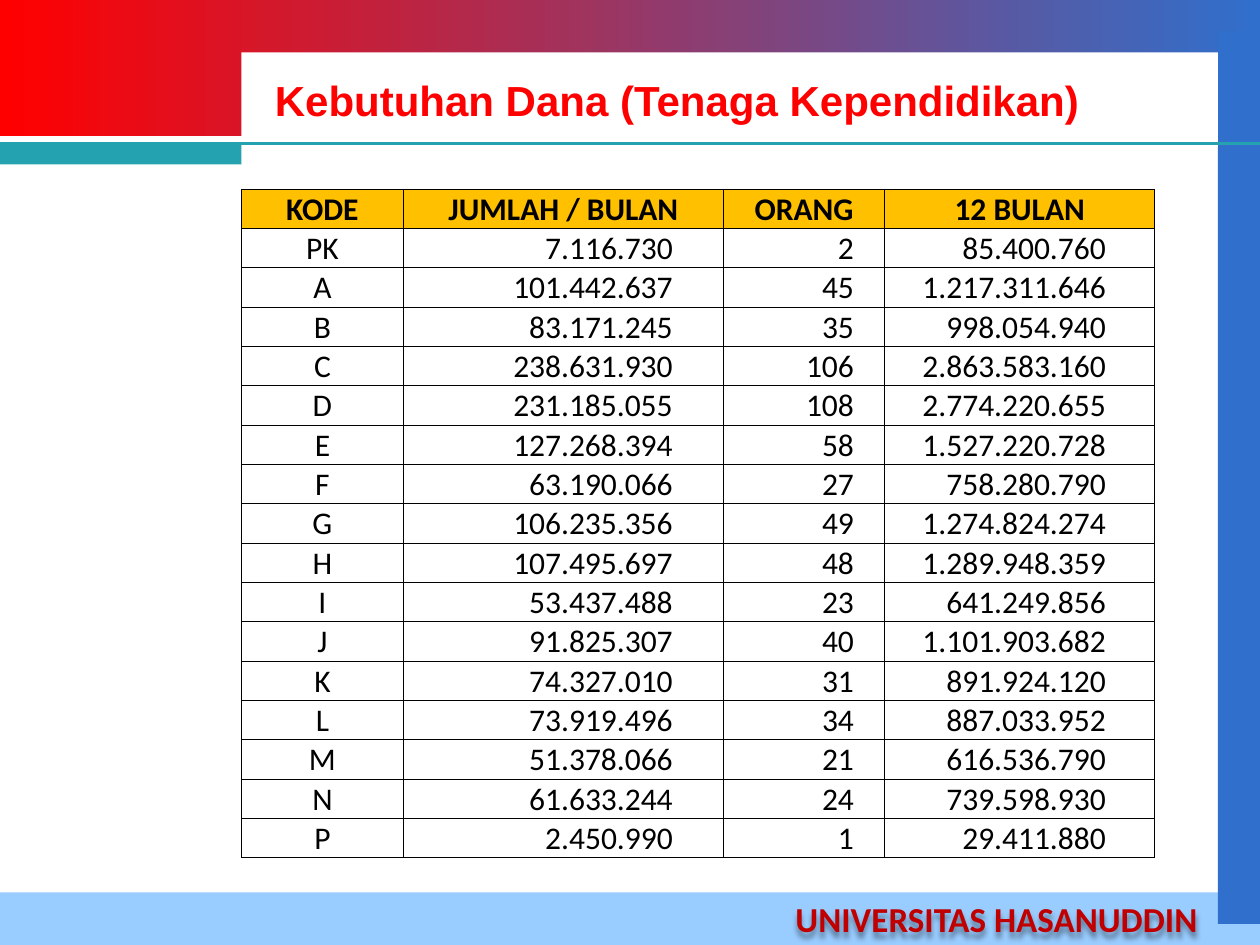
from lxml import etree
from pptx import Presentation
from pptx.dml.color import RGBColor
from pptx.enum import shapes, text
from pptx.oxml import parse_xml
from pptx.oxml.ns import nsdecls, qn
from pptx.util import Pt

RED = RGBColor(0xFF, 0x00, 0x00)
DARK_RED = RGBColor(0xC0, 0x00, 0x00)
BLUE = RGBColor(0x30, 0x6F, 0xCC)
LIGHT_BLUE = RGBColor(0x99, 0xCC, 0xFF)
TEAL = RGBColor(0x25, 0xA2, 0xAF)
GOLD = RGBColor(0xFF, 0xC0, 0x00)
WHITE = RGBColor(0xFF, 0xFF, 0xFF)
BLACK = RGBColor(0x00, 0x00, 0x00)

TITLE = "Kebutuhan Dana (Tenaga Kependidikan)"
FOOTER = "UNIVERSITAS HASANUDDIN"
HEADER = ("KODE", "JUMLAH / BULAN", "ORANG", "12 BULAN")
ROWS = [
    ("PK", "7.116.730", "2", "85.400.760"),
    ("A", "101.442.637", "45", "1.217.311.646"),
    ("B", "83.171.245", "35", "998.054.940"),
    ("C", "238.631.930", "106", "2.863.583.160"),
    ("D", "231.185.055", "108", "2.774.220.655"),
    ("E", "127.268.394", "58", "1.527.220.728"),
    ("F", "63.190.066", "27", "758.280.790"),
    ("G", "106.235.356", "49", "1.274.824.274"),
    ("H", "107.495.697", "48", "1.289.948.359"),
    ("I", "53.437.488", "23", "641.249.856"),
    ("J", "91.825.307", "40", "1.101.903.682"),
    ("K", "74.327.010", "31", "891.924.120"),
    ("L", "73.919.496", "34", "887.033.952"),
    ("M", "51.378.066", "21", "616.536.790"),
    ("N", "61.633.244", "24", "739.598.930"),
    ("P", "2.450.990", "1", "29.411.880"),
]
COLUMN_WIDTHS = (92.5, 183, 92, 154.5)
RIGHT_INSETS = (0.72, 29, 17.5, 28)  # room to the right of the figures
ROW_HEIGHT = 22.5
CELL_INSET = 0.72

# left, top, width, height, colour
TOP_BAND = (0, 0, 720, 78, RED)
BANDS = [
    (0, 510, 720, 30, LIGHT_BLUE),
    (696, 18, 24, 510, BLUE),
    (138, 30, 558, 54, WHITE),
    (0, 82, 138, 12, TEAL),
]
RULE_Y = 82


def add_band(slide, left, top, width, height, colour):
    band = slide.shapes.add_shape(shapes.MSO_SHAPE.RECTANGLE,
                                  Pt(left), Pt(top), Pt(width), Pt(height))
    band.shadow.inherit = False
    band.fill.solid()
    band.fill.fore_color.rgb = colour
    band.line.fill.background()
    return band


def add_rule(slide):
    rule = slide.shapes.add_connector(shapes.MSO_CONNECTOR.STRAIGHT,
                                      0, Pt(RULE_Y), Pt(720), Pt(RULE_Y))
    rule.line.color.rgb = TEAL
    rule.line.width = Pt(2.25)
    etree.SubElement(rule._element.spPr, qn("a:effectLst"))


def add_span(para, words, font, size, colour, bold):
    span = para.add_run()
    span.text = words
    span.font.name = font
    span.font.size = Pt(size)
    span.font.color.rgb = colour
    span.font.bold = bold


def add_label(slide, left, top, width, height, words, font, size, colour, wrap):
    box = slide.shapes.add_textbox(Pt(left), Pt(top), Pt(width), Pt(height))
    box.text_frame.word_wrap = wrap
    box.text_frame.vertical_anchor = text.MSO_ANCHOR.MIDDLE
    add_span(box.text_frame.paragraphs[0], words, font, size, colour, True)
    return box


def add_soft_shadow(box):
    box._element.spPr.append(parse_xml(
        f'<a:effectLst {nsdecls("a")}><a:outerShdw blurRad="38100" dist="38100" '
        'dir="5400000"><a:srgbClr val="000000"><a:alpha val="40000"/>'
        '</a:srgbClr></a:outerShdw></a:effectLst>'))


def add_borders(cell):
    properties = cell._tc.get_or_add_tcPr()
    for side in ("lnL", "lnR", "lnT", "lnB"):
        properties.append(parse_xml(
            f'<a:{side} {nsdecls("a")} w="{Pt(0.5)}"><a:solidFill>'
            f'<a:srgbClr val="{BLACK}"/></a:solidFill></a:{side}>'))


def fill_cell(cell, words, column, is_header):
    centred = is_header or column == 0
    cell.margin_left = cell.margin_top = Pt(CELL_INSET)
    cell.margin_right = Pt(CELL_INSET if centred else RIGHT_INSETS[column])
    cell.margin_bottom = 0
    cell.vertical_anchor = text.MSO_ANCHOR.BOTTOM
    add_borders(cell)
    if is_header:
        cell.fill.solid()
        cell.fill.fore_color.rgb = GOLD
    else:
        cell.fill.background()
    para = cell.text_frame.paragraphs[0]
    para.alignment = text.PP_ALIGN.CENTER if centred else text.PP_ALIGN.RIGHT
    add_span(para, words, "Calibri", 18, BLACK, is_header)


def add_cost_table(slide):
    lines = [HEADER] + ROWS
    table = slide.shapes.add_table(
        len(lines), len(HEADER), Pt(138), Pt(108),
        Pt(sum(COLUMN_WIDTHS)), Pt(ROW_HEIGHT * len(lines))).table
    table.first_row = table.horz_banding = False
    for column, width in zip(table.columns, COLUMN_WIDTHS):
        column.width = Pt(width)
    for r, line in enumerate(lines):
        table.rows[r].height = Pt(ROW_HEIGHT)
        for c, words in enumerate(line):
            fill_cell(table.cell(r, c), words, c, r == 0)


def main():
    deck = Presentation()
    deck.slide_width, deck.slide_height = Pt(720), Pt(540)
    slide = deck.slides.add_slide(deck.slide_layouts[6])

    top_band = add_band(slide, *TOP_BAND)
    top_band.fill.gradient()
    top_band.fill.gradient_angle = 0
    for stop, colour in zip(top_band.fill.gradient_stops, (RED, BLUE)):
        stop.color.rgb = colour
    for band in BANDS:
        add_band(slide, *band)
    add_rule(slide)

    footer = add_label(slide, 447.5, 509, 246, 31.5, FOOTER, "Calibri", 20, DARK_RED, False)
    add_soft_shadow(footer)
    add_label(slide, 150, 36, 540, 42, TITLE, "Arial", 24, RED, True)
    add_cost_table(slide)
    deck.save("out.pptx")


if __name__ == "__main__":
    main()
